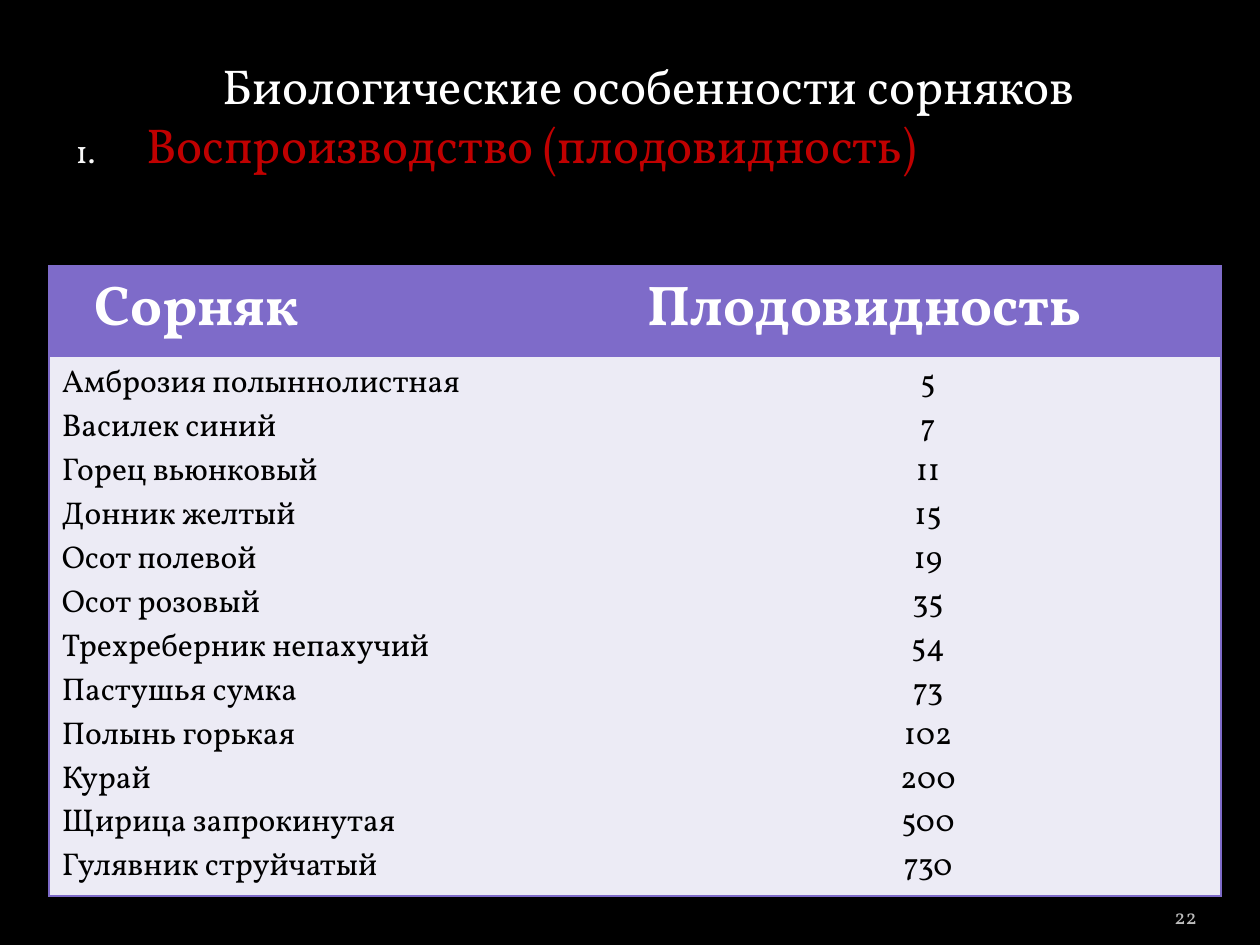
from lxml.etree import SubElement
from pptx import Presentation
from pptx.dml.color import RGBColor
from pptx.enum.text import MSO_ANCHOR, MSO_AUTO_SIZE, PP_ALIGN
from pptx.oxml.ns import qn
from pptx.util import Inches, Pt

COLORS = {
    "background": "000000",
    "white": "FFFFFF",
    "number": "F9F9F9",
    "red": "C00000",
    "purple": "7E6BC9",
    "lavender": "ECEBF5",
    "black": "000000",
    "gray": "BDBDBD",
}
FONT = "Vollkorn"
NO_STYLE = "{2D5ABB26-0587-4C30-8999-92F81FD0307C}"
WEEDS = [
    ("Амброзия полыннолистная", "5"),
    ("Василек синий", "7"),
    ("Горец вьюнковый", "11"),
    ("Донник желтый", "15"),
    ("Осот полевой", "19"),
    ("Осот розовый", "35"),
    ("Трехреберник непахучий", "54"),
    ("Пастушья сумка", "73"),
    ("Полынь горькая", "102"),
    ("Курай", "200"),
    ("Щирица запрокинутая", "500"),
    ("Гулявник струйчатый", "730"),
]


def write(paragraph, text, size=18, color="black", bold=False,
          align=PP_ALIGN.LEFT, margin=0, indent=0, numbered=False):
    """Fill a paragraph with one formatted run; margin and indent are in inches."""
    paragraph.alignment = align
    paragraph.space_before = Pt(0)
    properties = paragraph._p.get_or_add_pPr()
    properties.set("marL", str(Inches(margin)))
    properties.set("indent", str(Inches(indent)))
    if numbered:
        bullet_color = SubElement(properties, qn("a:buClr"))
        SubElement(bullet_color, qn("a:srgbClr"), val=COLORS["number"])
        SubElement(properties, qn("a:buSzPct"), val="65000")
        SubElement(properties, qn("a:buFont"), typeface=FONT)
        SubElement(properties, qn("a:buAutoNum"), type="arabicPeriod")
    else:
        SubElement(properties, qn("a:buNone"))
    run = paragraph.add_run()
    run.text = text
    run.font.name = FONT
    run.font.size = Pt(size)
    run.font.bold = bold
    run.font.color.rgb = RGBColor.from_string(COLORS[color])


def format_cell(cell, fill, sides):
    """Set the fill and draw a purple border on the given sides."""
    properties = cell._tc.get_or_add_tcPr()
    for side in sides:
        line = SubElement(properties, qn(f"a:ln{side}"), w=str(Pt(1)))
        line_fill = SubElement(line, qn("a:solidFill"))
        SubElement(line_fill, qn("a:srgbClr"), val=COLORS["purple"])
    cell.fill.solid()
    cell.fill.fore_color.rgb = RGBColor.from_string(COLORS[fill])


presentation = Presentation()
presentation.slide_width = Inches(10)
presentation.slide_height = Inches(7.5)
slide = presentation.slides.add_slide(presentation.slide_layouts[1])
slide.background.fill.solid()
slide.background.fill.fore_color.rgb = RGBColor.from_string(COLORS["background"])

# Heading and numbered topic share the body placeholder
title = slide.shapes.title.element
title.getparent().remove(title)
body = slide.placeholders[1]
body.left, body.top = Inches(0.5), Inches(0.39)
body.width, body.height = Inches(9), Inches(6.31)
body_frame = body.text_frame
body_frame.auto_size = MSO_AUTO_SIZE.NONE
write(body_frame.paragraphs[0], "Биологические особенности сорняков", size=28,
      color="white", align=PP_ALIGN.CENTER, margin=0.3)
write(body_frame.add_paragraph(), "Воспроизводство (плодовидность)", size=28,
      color="red", margin=0.56, indent=-0.56, numbered=True)

# Fertility table: one header row, one row holding both lists
table_frame = slide.shapes.add_table(2, 2, Inches(0.39), Inches(2.11),
                                     Inches(9.3), Inches(4.84))
table = table_frame.table
table.horz_banding = False
for style_id in table_frame.element.iter(qn("a:tableStyleId")):
    style_id.text = NO_STYLE
table.rows[0].height = Inches(0.71)
table.rows[1].height = Inches(4.14)

columns = [
    ("Сорняк", 0.26, PP_ALIGN.LEFT, "LTB"),
    ("Плодовидность", 0, PP_ALIGN.CENTER, "RTB"),
]
for column, (heading, margin, align, sides) in enumerate(columns):
    header, content = table.cell(0, column), table.cell(1, column)
    format_cell(header, "purple", sides)
    format_cell(content, "lavender", sides)
    write(header.text_frame.paragraphs[0], heading, size=32, color="white",
          bold=True, margin=margin)
    for index, weed in enumerate(WEEDS):
        frame = content.text_frame
        paragraph = frame.add_paragraph() if index else frame.paragraphs[0]
        write(paragraph, weed[column], align=align)

# Page number
page_box = slide.shapes.add_textbox(Inches(8.67), Inches(7.02), Inches(0.83), Inches(0.4))
page_frame = page_box.text_frame
page_frame.word_wrap = True
page_frame.margin_left = page_frame.margin_right = 0
page_frame.vertical_anchor = MSO_ANCHOR.BOTTOM
write(page_frame.paragraphs[0], "22", size=12, color="gray", align=PP_ALIGN.RIGHT)

presentation.save("out.pptx")
